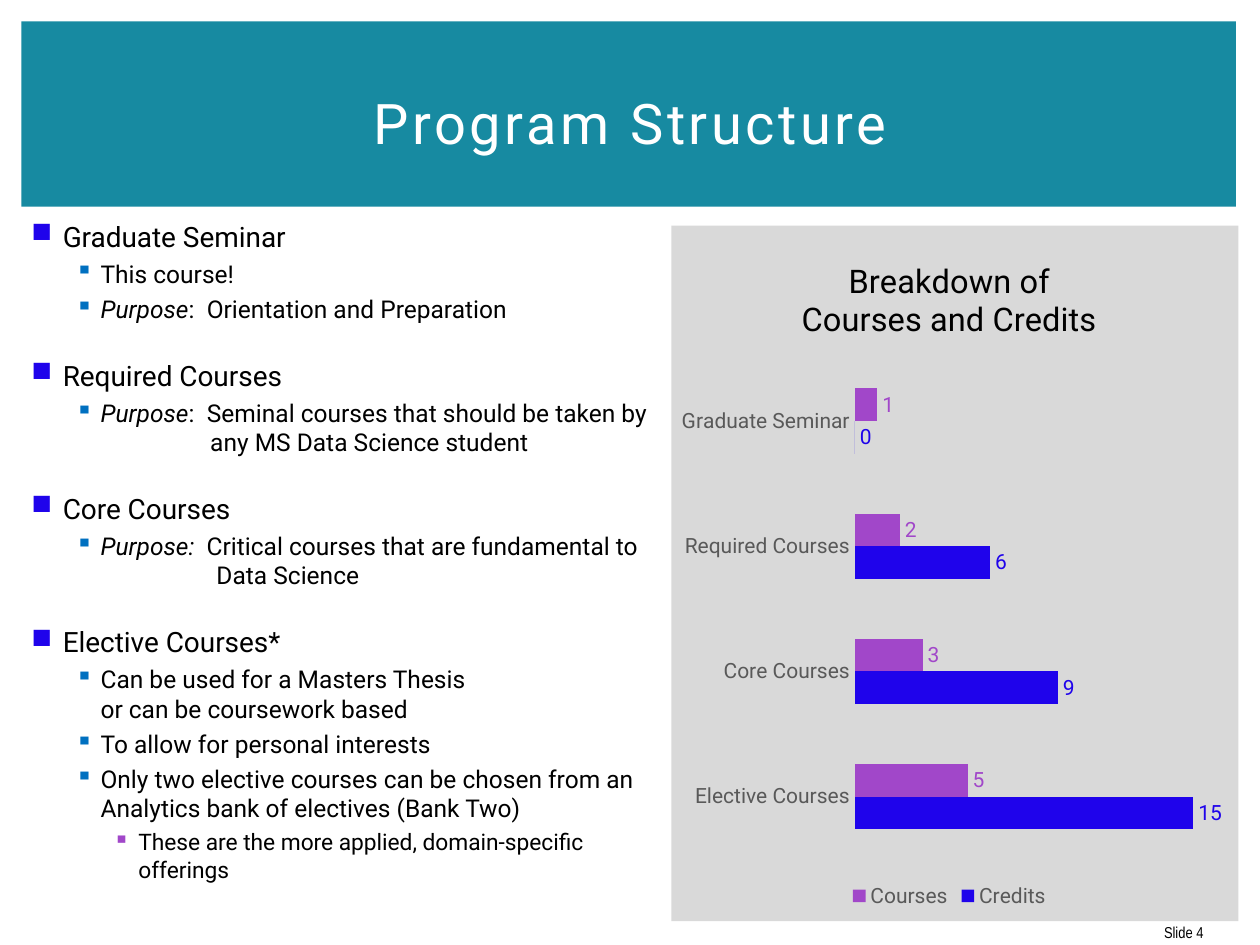
from lxml import etree
from pptx import Presentation
from pptx.chart.data import CategoryChartData
from pptx.dml.color import RGBColor
from pptx.enum.chart import XL_CHART_TYPE, XL_LABEL_POSITION, XL_LEGEND_POSITION, XL_TICK_MARK
from pptx.enum.shapes import MSO_SHAPE
from pptx.enum.text import MSO_ANCHOR, PP_ALIGN
from pptx.oxml import parse_xml
from pptx.oxml.ns import nsdecls, qn
from pptx.util import Inches, Pt

RECT = MSO_SHAPE.RECTANGLE
BAR = XL_CHART_TYPE.BAR_CLUSTERED
OUTSIDE = XL_LABEL_POSITION.OUTSIDE_END
BOTTOM = XL_LEGEND_POSITION.BOTTOM
NO_TICK = XL_TICK_MARK.NONE
MIDDLE, TOP = MSO_ANCHOR.MIDDLE, MSO_ANCHOR.TOP
LEFT, CENTER, RIGHT = PP_ALIGN.LEFT, PP_ALIGN.CENTER, PP_ALIGN.RIGHT

COLORS = {
    "teal": "178AA1", "panel": "D9D9D9", "white": "FFFFFF", "black": "000000",
    "blue": "1F03EB", "sky": "0070C0", "purple": "A147C9", "gray": "595959",
}
LEVELS = [
    {"size": 16, "left": 0.3, "hang": 0.25, "mark": "■", "color": "blue", "space": 3.7},
    {"size": 14, "left": 0.6, "hang": 0.2, "mark": "▪", "color": "sky", "space": 3.3},
    {"size": 13, "left": 0.9, "hang": 0.2, "mark": "▪", "color": "purple", "space": 3},
]
GROUP_GAP = 16.4

GROUPS = [
    [(0, "", "Graduate Seminar"),
     (1, "", "This course!"),
     (1, "Purpose", ":  Orientation and Preparation")],
    [(0, "", "Required Courses"),
     (1, "Purpose", ":  Seminal courses that should be taken by"),
     (1, None, "any MS Data Science student", 1.47)],
    [(0, "", "Core Courses"),
     (1, "Purpose:  ", "Critical courses that are fundamental to"),
     (1, None, "Data Science", 1.52)],
    [(0, "", "Elective Courses*"),
     (1, "", "Can be used for a Masters Thesis \vor can be coursework based"),
     (1, "", "To allow for personal interests"),
     (1, "", "Only two elective courses can be chosen from an "
             "Analytics bank of electives (Bank Two)"),
     (2, "", "These are the more applied, domain-specific offerings")],
]
CREDITS = {
    "Elective Courses": (15, 5), "Core Courses": (9, 3),
    "Required Courses": (6, 2), "Graduate Seminar": (0, 1),
}


class Deck:
    def __init__(self, slide, face="Roboto"):
        self.slide = slide
        self.face = face

    def rgb(self, name):
        return RGBColor.from_string(COLORS[name])

    def font(self, font, size, color="black", **more):
        values = {"size": Pt(size), "name": self.face, "bold": False, **more}
        for key, value in values.items():
            setattr(font, key, value)
        font.color.rgb = self.rgb(color)

    def panel(self, box, color):
        shape = self.slide.shapes.add_shape(RECT, *map(Inches, box))
        shape.shadow.inherit = False
        shape.fill.solid()
        shape.fill.fore_color.rgb = self.rgb(color)
        shape.line.fill.background()

    def frame(self, box, anchor):
        frame = self.slide.shapes.add_textbox(*map(Inches, box)).text_frame
        frame.word_wrap = True
        frame.vertical_anchor = anchor
        return frame

    def label(self, box, text, size, color, align, track=0, **more):
        line = self.frame(box, MIDDLE).paragraphs[0]
        line.alignment = align
        run = line.add_run()
        run.text = text
        self.font(run.font, size, color, **more)
        if track:
            run.font._element.set("spc", str(track * 100))

    def bullet(self, line, level):
        props = line._p.get_or_add_pPr()
        props.set("marL", str(Inches(level["left"])))
        props.set("indent", str(-Inches(level["hang"])))
        color = etree.SubElement(props, qn("a:buClr"))
        etree.SubElement(color, qn("a:srgbClr"), val=COLORS[level["color"]])
        etree.SubElement(props, qn("a:buChar"), char=level["mark"])

    def item(self, line, gap, depth, lead, text, left=0):
        level = LEVELS[depth]
        line.alignment = LEFT
        line.space_before = Pt(0 if left else level["space"] + gap)
        if left:
            line._p.get_or_add_pPr().set("marL", str(Inches(left)))
        else:
            line.level = depth
            self.bullet(line, level)
        for words, slant in ((lead, True), (text, False)):
            for spot, part in enumerate(words.split("\v") if words else []):
                if spot:
                    line.add_line_break()
                run = line.add_run()
                run.text = part
                self.font(run.font, level["size"], italic=slant)

    def outline(self, box, groups):
        frame = self.frame(box, TOP)
        line = frame.paragraphs[0]
        for order, group in enumerate(groups):
            for rank, entry in enumerate(group):
                if order or rank:
                    line = frame.add_paragraph()
                self.item(line, GROUP_GAP if order and not rank else 0, *entry)

    def chart(self, box, title, table, series, plot_box):
        data = CategoryChartData()
        data.categories = list(table)
        for name, values in zip(series, zip(*table.values())):
            data.add_series(name, values)
        chart = self.slide.shapes.add_chart(BAR, *map(Inches, box), data).chart
        self.font(chart.font, 10)
        self.heading(chart, title)
        self.axes(chart)
        chart.has_legend = True
        chart.legend.position = BOTTOM
        chart.legend.include_in_layout = False
        self.font(chart.legend.font, 12, "gray")
        plot = chart.plots[0]
        for key, value in {"gap_width": 182, "overlap": 0, "vary_by_categories": False}.items():
            setattr(plot, key, value)
        for bars, color in zip(plot.series, series.values()):
            bars.format.fill.solid()
            bars.format.fill.fore_color.rgb = self.rgb(color)
            labels = bars.data_labels
            labels.show_value = True
            labels.position = OUTSIDE
            self.font(labels.font, 12, color)
        self.place(chart, plot_box)

    def heading(self, chart, lines):
        chart.has_title = True
        chart.chart_title.include_in_layout = False
        frame = chart.chart_title.text_frame
        for order, text in enumerate(lines):
            line = frame.add_paragraph() if order else frame.paragraphs[0]
            run = line.add_run()
            run.text = text
            self.font(run.font, 18.6)

    def axes(self, chart):
        names, scale = chart.category_axis, chart.value_axis
        names.major_tick_mark = names.minor_tick_mark = NO_TICK
        self.font(names.tick_labels.font, 12, "gray")
        for key, value in {"visible": False, "minimum_scale": 0, "maximum_scale": 16,
                           "has_major_gridlines": True}.items():
            setattr(scale, key, value)
        for part in (names, scale.major_gridlines):
            part.format.line.color.rgb = self.rgb("panel")
            part.format.line.width = Pt(0.75)

    def place(self, chart, box):
        area = chart._chartSpace.chart.plotArea
        for old in area.findall(qn("c:layout")):
            area.remove(old)
        sizes = "".join(f'<c:{key} val="{value}"/>' for key, value in zip("xywh", box))
        area.insert(0, parse_xml(
            f'<c:layout {nsdecls("c")}><c:manualLayout><c:layoutTarget val="inner"/>'
            f'<c:xMode val="edge"/><c:yMode val="edge"/>{sizes}'
            '</c:manualLayout></c:layout>'))


def main():
    show = Presentation()
    show.slide_width, show.slide_height = Inches(10), Inches(7.5)
    deck = Deck(show.slides.add_slide(show.slide_layouts[6]))
    deck.panel((0.17, 1.79, 9.66, 5.52), "panel")
    deck.panel((0.17, 0.17, 9.64, 1.47), "teal")
    deck.label((9.01, 7.25, 0.64, 0.3), "Slide 4", 9, "black", RIGHT, name="Arial Narrow")
    body = (0.1, 1.69, 5.23, 5.69)
    deck.panel(body, "white")
    deck.outline(body, GROUPS)
    deck.chart((5.33, 1.88, 4.41, 5.37), ["Breakdown of", "Courses and Credits"], CREDITS,
               {"Credits": "blue", "Courses": "purple"}, (0.33, 0.18, 0.65, 0.74))
    deck.label((0.42, 0.39, 9.17, 1.15), "Program Structure", 32, "white", CENTER, track=2)
    show.save("out.pptx")


if __name__ == "__main__":
    main()
